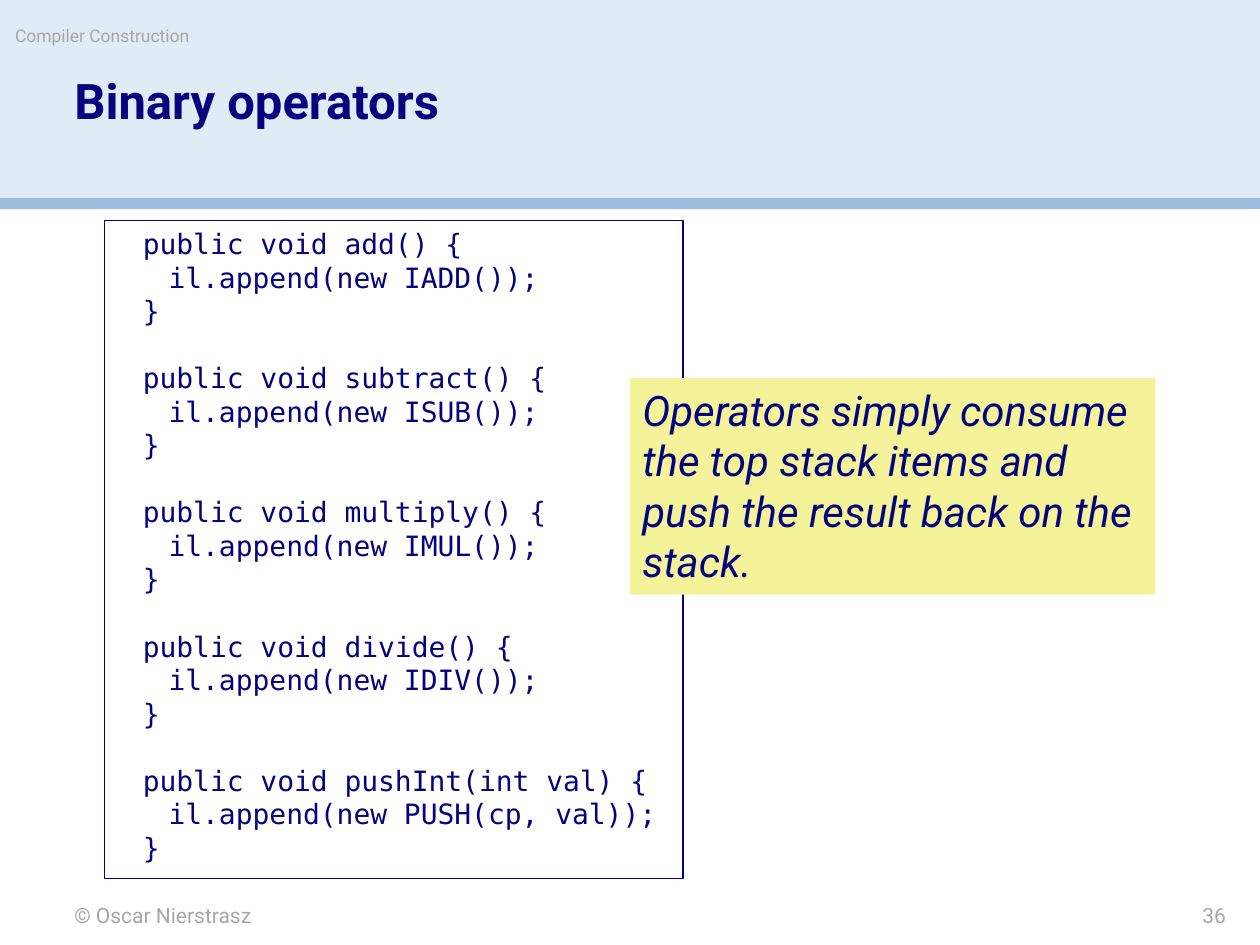
from pptx import Presentation
from pptx.dml.color import RGBColor
from pptx.enum.shapes import MSO_SHAPE as SHAPE
from pptx.enum.text import MSO_ANCHOR as ANCHOR, MSO_AUTO_SIZE as AUTO, PP_ALIGN as ALIGN
from pptx.util import Inches, Pt

WIDTH, HEIGHT = 10, 7.5
NAVY, GREY = "05027D", "A7A7A7"
SANS, MONO = "Roboto", "DejaVu Sans Mono"
CODE_LEADING = 19.17
CODE_INDENT = 0.205

METHODS = [
    ("add()", "IADD()"),
    ("subtract()", "ISUB()"),
    ("multiply()", "IMUL()"),
    ("divide()", "IDIV()"),
    ("pushInt(int val)", "PUSH(cp, val)"),
]


def color(value):
    return RGBColor.from_string(value)


class Deck:
    def __init__(self):
        self.prs = Presentation()
        self.prs.slide_width = Inches(WIDTH)
        self.prs.slide_height = Inches(HEIGHT)
        self.s = self.prs.slides.add_slide(self.prs.slide_layouts[5])

    def box(self, x, y, w, h):
        sw, sh = self.prs.slide_width, self.prs.slide_height
        return int(x * sw), int(y * sh), int(w * sw), int(h * sh)

    def frame(self, sp, margins=(0, 0), wrap=True):
        tf = sp.text_frame
        tf.auto_size = AUTO.NONE
        tf.word_wrap = wrap
        tf.vertical_anchor = ANCHOR.TOP
        tf.margin_left = tf.margin_right = Inches(margins[0])
        tf.margin_top = tf.margin_bottom = Inches(margins[1])
        return tf

    def format(self, p, size, fill, font=SANS, bold=False, italic=False, align=ALIGN.LEFT):
        p.alignment = align
        for r in p.runs:
            f = r.font
            f.name, f.size, f.bold, f.italic = font, Pt(size), bold, italic
            f.color.rgb = color(fill)

    def title(self, text, *at):
        sp = self.s.shapes.title
        sp.left, sp.top, sp.width, sp.height = self.box(*at)
        tf = self.frame(sp)
        tf.text = text
        p = tf.paragraphs[0]
        p.line_spacing = 0.9
        self.format(p, 28, "0A017F", bold=True)
        sp.element.getparent().append(sp.element)

    def rect(self, fill, *at, line=None):
        sp = self.s.shapes.add_shape(SHAPE.RECTANGLE, *self.box(*at))
        sp.shadow.inherit = False
        sp.fill.solid()
        sp.fill.fore_color.rgb = color(fill)
        if line:
            sp.line.color.rgb = color(line)
            sp.line.width = Pt(0.75)
        else:
            sp.line.fill.background()
        return sp

    def label(self, text, size, *at, align=ALIGN.LEFT):
        tf = self.frame(self.s.shapes.add_textbox(*self.box(*at)))
        tf.text = text
        self.format(tf.paragraphs[0], size, GREY, align=align)

    def note(self, text, *at):
        tf = self.frame(self.rect("F5F399", *at), (0.1, 0.05))
        tf.text = text
        self.format(tf.paragraphs[0], 24, NAVY, italic=True)

    def code(self, methods, *at):
        tf = self.frame(self.rect("FFFFFF", *at, line=NAVY), (0.1, 0.05), wrap=False)
        lines = []
        for head, instruction in methods:
            lines += [(1, f"public void {head} {{"), (2, f"il.append(new {instruction});"), (1, "}")]
        tf.text = "\n".join(text for _, text in lines)
        for i, (p, (level, _)) in enumerate(zip(tf.paragraphs, lines)):
            self.format(p, 16, NAVY, font=MONO)
            p.line_spacing = Pt(CODE_LEADING)
            p.space_before = Pt(CODE_LEADING if i and i % 3 == 0 else 0)
            pPr = p._p.get_or_add_pPr()
            pPr.set("marL", str(Inches(level * CODE_INDENT)))
            pPr.set("indent", "0")


def main():
    d = Deck()
    d.rect("E1EBF5", 0, 0, 1, 0.21)
    d.rect("9CBDDE", 0, 1.57 / HEIGHT, 1, 0.09 / HEIGHT)
    d.title("Binary operators", 0.059, 0.61 / HEIGHT, 0.883, 0.89 / HEIGHT)
    d.label("© Oscar Nierstrasz", 12, 0.059, 7.16 / HEIGHT, 0.417, 0.2 / HEIGHT)
    d.label("Compiler Construction", 10, 0.012, 0.2 / HEIGHT, 0.59, 0.28 / HEIGHT)
    d.code(METHODS, 0.083, 1.75 / HEIGHT, 0.459, 5.22 / HEIGHT)
    d.note("Operators simply consume the top stack items and push the result back on the stack.",
           0.5, 0.4, 0.417, 1.72 / HEIGHT)
    d.label("36", 12, 0.825, 7.16 / HEIGHT, 0.148, 0.2 / HEIGHT, align=ALIGN.RIGHT)
    d.prs.save("out.pptx")


if __name__ == "__main__":
    main()
